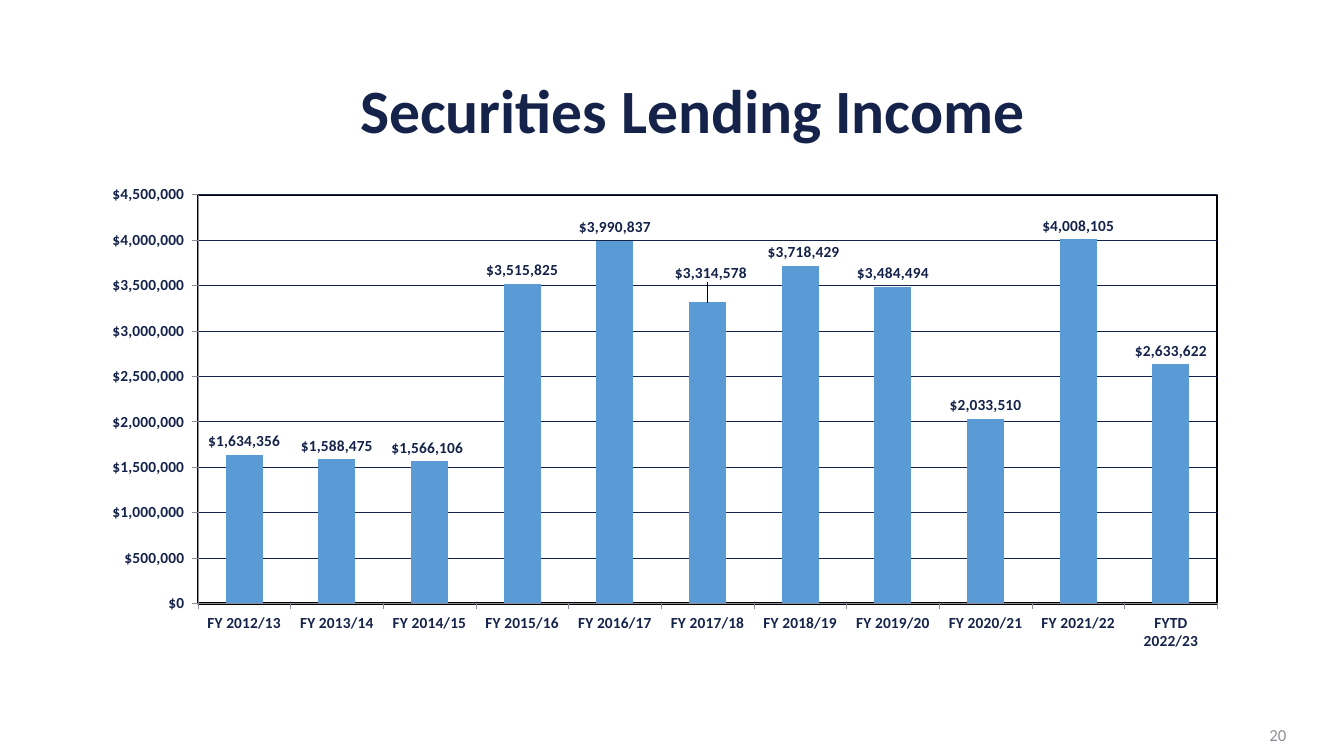
from lxml import etree
from pptx import Presentation
from pptx.chart.data import CategoryChartData
from pptx.dml.color import RGBColor
from pptx.enum import chart as ch, text as tx
from pptx.oxml import ns, parse_xml
from pptx.util import Pt

NAVY, GRAY, BLUE, BLACK = "15234A", "8C8D96", "5B9BD5", "000000"
INCOME = {
    "FY 2012/13": 1634356,
    "FY 2013/14": 1588475,
    "FY 2014/15": 1566106,
    "FY 2015/16": 3515825,
    "FY 2016/17": 3990837,
    "FY 2017/18": 3314578,
    "FY 2018/19": 3718429,
    "FY 2019/20": 3484494,
    "FY 2020/21": 2033510,
    "FY 2021/22": 4008105,
    "FYTD 2022/23": 2633622,
}
# Label shifts as shares of the chart's width and height
SHIFTS = {2: (-0.002, 0), 5: (0.003, -0.033), 6: (0.003, 0)}
DOLLARS = '"$"#,##0'


def color(code):
    return RGBColor.from_string(code)


def style(font, size, code=NAVY, bold=False):
    font.name, font.size, font.bold = "Calibri", Pt(size), bold
    font.color.rgb = color(code)


def write(frame, words, size, code=NAVY, bold=False, align=None, space=None):
    """Fill a text frame with one formatted, vertically centred paragraph."""
    frame.word_wrap = True
    frame.auto_size = tx.MSO_AUTO_SIZE.NONE
    frame.vertical_anchor = tx.MSO_ANCHOR.MIDDLE
    para = frame.paragraphs[0]
    para.alignment, para.line_spacing = align, space
    run = para.add_run()
    run.text = words
    style(run.font, size, code, bold)


def rule(line, code, width):
    line.color.rgb, line.width = color(code), Pt(width)


def layout(x, y, w=None, h=None):
    """Make a manual layout: a plot frame with w and h, otherwise a shift."""
    root = etree.Element(ns.qn("c:layout"))
    box = etree.SubElement(root, ns.qn("c:manualLayout"))
    parts = [("x", x), ("y", y)]
    if w:
        parts = [("layoutTarget", "inner"), ("xMode", "edge"),
                 ("yMode", "edge"), *parts, ("w", w), ("h", h)]
    for tag, val in parts:
        etree.SubElement(box, ns.qn("c:" + tag), val=str(val))
    return root


class Page:
    def __init__(self, deck):
        self.slide = deck.slides.add_slide(deck.slide_layouts[5])

    def title(self, words, *box):
        head = self.slide.shapes.title
        head.left, head.top, head.width, head.height = map(Pt, box)
        write(head.text_frame, words, 44, bold=True,
              align=tx.PP_ALIGN.CENTER, space=0.9)

    def label(self, words, *box):
        note = self.slide.shapes.add_textbox(*map(Pt, box))
        write(note.text_frame, words, 12, GRAY, align=tx.PP_ALIGN.RIGHT)

    def columns(self, name, values, *box):
        data = CategoryChartData()
        data.categories = list(values)
        data.add_series(name, list(values.values()))
        chart = self.slide.shapes.add_chart(
            ch.XL_CHART_TYPE.COLUMN_CLUSTERED, *map(Pt, box), data).chart
        chart.has_legend = chart.has_title = False
        style(chart.font, 18)
        self.axes(chart)
        self.bars(chart)
        self.frame(chart)

    def axes(self, chart):
        for axis in (chart.category_axis, chart.value_axis):
            style(axis.tick_labels.font, 11, bold=True)
            rule(axis.format.line, GRAY, 0.5)
            axis.major_tick_mark = ch.XL_TICK_MARK.OUTSIDE
        scale = chart.value_axis
        scale.minimum_scale, scale.maximum_scale = 0, 4500000
        scale.major_unit = 500000
        scale.tick_labels.number_format = DOLLARS + r'_);[Red]\("$"#,##0\)'
        scale.tick_labels.number_format_is_linked = False
        rule(scale.major_gridlines.format.line, NAVY, 0.5)

    def bars(self, chart):
        plot = chart.plots[0]
        plot.gap_width, plot.vary_by_categories = 150, False
        bar = plot.series[0]
        bar.format.fill.solid()
        bar.format.fill.fore_color.rgb = color(BLUE)
        tags = bar.data_labels
        tags.show_value = True
        tags.number_format, tags.number_format_is_linked = DOLLARS, False
        tags.position = ch.XL_LABEL_POSITION.OUTSIDE_END
        style(tags.font, 11, bold=True)
        for spot in SHIFTS:
            tag = bar.points[spot].data_label
            tag.position = ch.XL_LABEL_POSITION.OUTSIDE_END
            style(tag.font, 11, bold=True)
        moved = chart._chartSpace.xpath(".//c:dLbl")
        for node, shift in zip(moved, SHIFTS.values()):
            form = etree.Element(ns.qn("c:numFmt"), formatCode=DOLLARS,
                                 sourceLinked="0")
            node.insert(1, layout(*shift))
            node.insert(2, form)

    def frame(self, chart):
        """Place the plot and outline it."""
        area = chart._chartSpace.xpath(".//c:plotArea")[0]
        for old in area.findall(ns.qn("c:layout")):
            area.remove(old)
        area.insert(0, layout(0.093, 0.038, 0.887, 0.844))
        area.append(parse_xml(
            f'<c:spPr {ns.nsdecls("c", "a")}><a:noFill/>'
            f'<a:ln w="{Pt(1.5)}"><a:solidFill><a:srgbClr val="{BLACK}"/>'
            '</a:solidFill></a:ln></c:spPr>'))


def main():
    deck = Presentation()
    deck.slide_width, deck.slide_height = Pt(960), Pt(540)
    page = Page(deck)
    page.title("Securities Lending Income", 177, 46, 636, 70)
    page.columns("Series 1", INCOME, 65, 126, 821, 346)
    page.label("20", 710, 510.5, 216, 29)
    deck.save("out.pptx")


if __name__ == "__main__":
    main()
